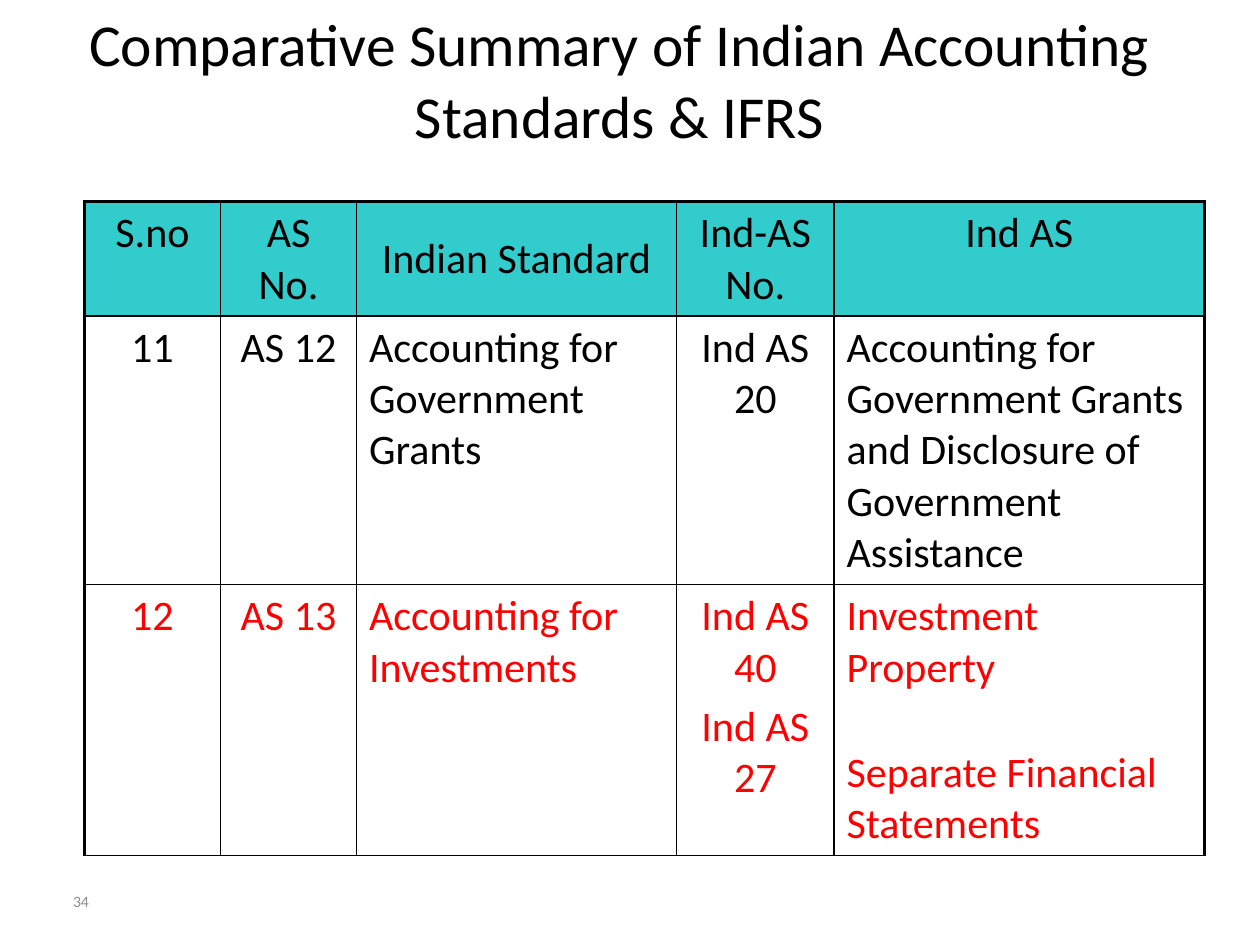
from lxml import etree
from pptx import Presentation, util as u
from pptx.dml.color import RGBColor
from pptx.enum import text
from pptx.oxml.ns import qn

BLACK, RED, TEAL, GRAY = "000000", "FF0000", "33CCCC", "8C8C8C"
TOP, MIDDLE = text.MSO_ANCHOR.TOP, text.MSO_ANCHOR.MIDDLE
LEFT, CENTER = text.PP_ALIGN.LEFT, text.PP_ALIGN.CENTER


def write(frame, content, size, color=BLACK, align=LEFT, anchor=MIDDLE, gap=0, spacing=None):
    """Fill a text frame, one paragraph for each line of content."""
    frame.word_wrap = True
    frame.vertical_anchor = anchor
    frame.text = content
    for number, paragraph in enumerate(frame.paragraphs):
        paragraph.alignment = align
        paragraph.line_spacing = spacing
        paragraph.space_before = u.Pt(gap if number else 0)
        paragraph.font.size = u.Pt(size)
        paragraph.font.name = "Calibri"
        paragraph.font.color.rgb = RGBColor.from_string(color)


def add_border(cell, side, width):
    line = etree.SubElement(cell._tc.get_or_add_tcPr(), qn(f"a:ln{side}"), w=str(u.Pt(width)))
    fill = etree.SubElement(line, qn("a:solidFill"))
    etree.SubElement(fill, qn("a:srgbClr"), val=BLACK)


presentation = Presentation()
presentation.slide_width, presentation.slide_height = u.Inches(10), u.Inches(7.5)
slide = presentation.slides.add_slide(presentation.slide_layouts[6])

# Slide number
number_box = slide.shapes.add_textbox(u.Inches(0.5), u.Inches(6.95), u.Inches(2.33), u.Inches(0.4))
number_box.text_frame.margin_left = u.Inches(0.08)
write(number_box.text_frame, "34", size=9, color=GRAY)

# Table of standards
column_widths = [1.08, 1.08, 2.54, 1.25, 2.94]
row_heights = [0.91, 2.13, 2.15]
rows = [
    ["S.no", "AS No.", "Indian Standard", "Ind-AS No.", "Ind AS"],
    ["11", "AS 12", "Accounting for Government Grants", "Ind AS 20",
     "Accounting for Government Grants and Disclosure of Government Assistance"],
    ["12", "AS 13", "Accounting for Investments", "Ind AS 40\nInd AS 27",
     "Investment Property\nSeparate Financial Statements"],
]
table = slide.shapes.add_table(
    len(rows), len(column_widths), u.Inches(0.67), u.Inches(1.6),
    u.Inches(sum(column_widths)), u.Inches(sum(row_heights))).table
for column, width in zip(table.columns, column_widths):
    column.width = u.Inches(width)
for row, height in zip(table.rows, row_heights):
    row.height = u.Inches(height)

last_column = len(column_widths) - 1
for r, row in enumerate(rows):
    for c, content in enumerate(row):
        cell = table.cell(r, c)
        header = r == 0
        centered = header or c in (0, 1, 3)
        anchor = MIDDLE if header and 0 < c < last_column else TOP
        write(cell.text_frame, content, size=24, color=RED if r == 2 else BLACK,
              align=CENTER if centered else LEFT,
              gap=31 if c == last_column else 4.8)
        cell.vertical_anchor = anchor
        # Heavy outline at the left, right and top; thin lines elsewhere
        heavy = {"L": c == 0, "R": c == last_column, "T": header, "B": False}
        for side, is_heavy in heavy.items():
            add_border(cell, side, 2.25 if is_heavy else 1)
        if header:
            cell.fill.solid()
            cell.fill.fore_color.rgb = RGBColor.from_string(TEAL)
        else:
            cell.fill.background()

# Title
title = slide.shapes.add_textbox(u.Inches(0.25), 0, u.Inches(9.33), u.Inches(1.25))
write(title.text_frame, "Comparative Summary of Indian Accounting Standards & IFRS",
      size=34, align=CENTER)

presentation.save("out.pptx")
